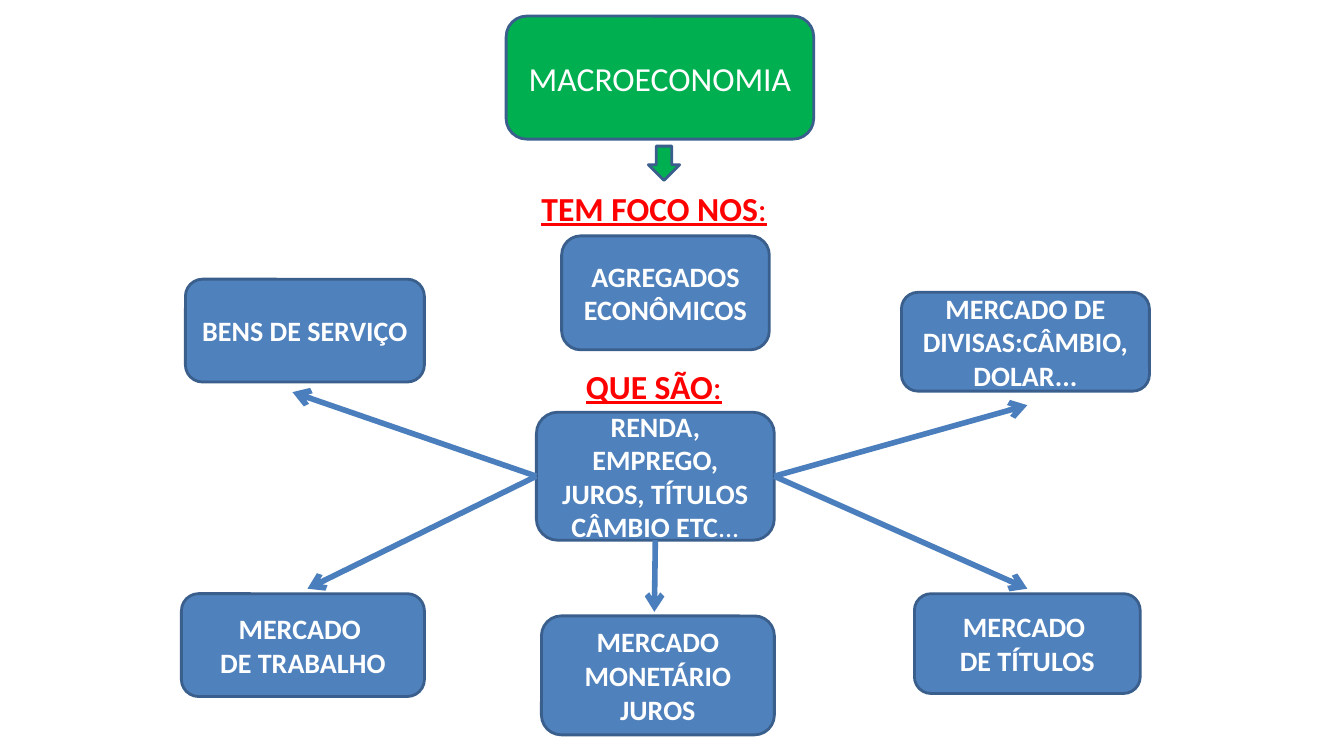
from dataclasses import dataclass

from lxml.etree import SubElement
from pptx import Presentation
from pptx.dml.color import RGBColor
from pptx.enum.shapes import MSO_CONNECTOR as Connector, MSO_SHAPE as Shape
from pptx.enum.text import MSO_ANCHOR as Anchor, MSO_AUTO_SIZE as AutoSize, PP_ALIGN as Align
from pptx.oxml.ns import qn
from pptx.util import Inches, Pt

WHITE = RGBColor(0xFF, 0xFF, 0xFF)
GREEN = RGBColor(0x00, 0xB0, 0x50)
BLUE = RGBColor(0x4F, 0x81, 0xBD)
OUTLINE = RGBColor(0x3A, 0x5F, 0x8C)
ARROW = RGBColor(0x4B, 0x7E, 0xBC)
RED = RGBColor(0xFF, 0x00, 0x00)

WIDTH, HEIGHT = Inches(13.33), Inches(7.5)
COLUMN, ROW = WIDTH / 100, HEIGHT / 100
LEFT, BOTTOM, RIGHT = 1, 2, 3


@dataclass
class Box:
    left: float
    top: float
    width: float
    height: float

    def area(self, left, top, width=0, height=0):
        return Box(self.left + left, self.top + top, width, height)

    def emu(self):
        return (round(self.left * COLUMN), round(self.top * ROW),
                round(self.width * COLUMN), round(self.height * ROW))


def write(shape, lines, size=20, color=WHITE, bold=True, underline=None,
          align=Align.CENTER, anchor=Anchor.MIDDLE, light_ending=""):
    frame = shape.text_frame
    frame.word_wrap = True
    frame.auto_size = AutoSize.NONE
    frame.vertical_anchor = anchor
    for index, line in enumerate(lines):
        paragraph = frame.add_paragraph() if index else frame.paragraphs[0]
        paragraph.alignment = align
        pieces = [(line, bold)]
        if light_ending and index == len(lines) - 1:
            pieces.append((light_ending, False))
        for text, weight in pieces:
            run = paragraph.add_run()
            run.text = text
            font = run.font
            font.name, font.size = "Calibri", Pt(size)
            font.bold, font.underline = weight, underline
            font.color.rgb = color


def add_block(slide, box, lines=(), kind=Shape.ROUNDED_RECTANGLE, fill=BLUE, light_ending=""):
    shape = slide.shapes.add_shape(kind, *box.emu())
    shape.shadow.inherit = False
    shape.fill.solid()
    shape.fill.fore_color.rgb = fill
    shape.line.color.rgb = OUTLINE
    shape.line.width = Pt(2)
    write(shape, lines, light_ending=light_ending)
    return shape


def add_label(slide, box, text, indent):
    label = slide.shapes.add_textbox(*box.emu())
    write(label, [text], size=24, color=RED, underline=True,
          align=Align.LEFT, anchor=Anchor.TOP, light_ending=":")
    label.text_frame.margin_left = Inches(indent)


def add_arrow(slide, source, side, tip):
    left, top, _, _ = tip.emu()
    arrow = slide.shapes.add_connector(Connector.STRAIGHT, left, top, left, top)
    arrow.begin_connect(source, side)
    arrow.line.color.rgb = ARROW
    arrow.line.width = Pt(4)
    properties = arrow._element.spPr
    SubElement(properties.find(qn("a:ln")), qn("a:tailEnd"), type="arrow")
    SubElement(properties, qn("a:effectLst"))


def add_header(slide, box):
    block = box.area(0, 0, box.width, 16.27)
    add_block(slide, block, fill=GREEN)
    title = slide.shapes.title
    title.left, title.top, title.width, title.height = block.emu()
    write(title, ["MACROECONOMIA"], size=24, bold=False)
    slide.shapes._spTree.append(title._element)
    add_block(slide, box.area(10.58, 17.2, 2.33, 4.53), kind=Shape.DOWN_ARROW, fill=GREEN)


def add_focus(slide, box):
    add_label(slide, box.area(0, 0, box.width, 6.67), "TEM FOCO NOS", 0.28)
    add_block(slide, box.area(3.61, 7.07, 15.45, 15.07), ["AGREGADOS ECONÔMICOS"])
    add_label(slide, box.area(3.61, 23.6, 13.35, 6.67), "QUE SÃO", 0.24)


def add_markets(slide, box):
    aggregates = add_block(slide, box.area(26.41, 17.6, 17.7, 16.93),
                           ["RENDA, EMPREGO, JUROS, TÍTULOS", "CÂMBIO ETC"],
                           light_ending="...")
    markets = [
        (["BENS DE SERVIÇO"], (0.3, 0, 17.78, 13.6), LEFT, (8.26, 14.94)),
        (["MERCADO ", "DE TRABALHO"], (0, 41.6, 18.08, 13.6), LEFT, (9.38, 40.94)),
        (["MERCADO DE DIVISAS:CÂMBIO, DOLAR..."], (53.57, 1.74, 18.45, 13.07), RIGHT, (62.94, 16.67)),
        (["MERCADO ", "DE TÍTULOS"], (54.54, 41.6, 16.8, 13.2), RIGHT, (62.94, 40.94)),
        (["MERCADO MONETÁRIO", "JUROS"], (26.79, 44.54, 17.33, 15.73), BOTTOM, (35.19, 44)),
    ]
    for lines, place, side, tip in markets:
        add_block(slide, box.area(*place), lines)
        add_arrow(slide, aggregates, side, box.area(*tip))


def main():
    presentation = Presentation()
    presentation.slide_width, presentation.slide_height = WIDTH, HEIGHT
    slide = presentation.slides.add_slide(presentation.slide_layouts.get_by_name("Title Only"))
    add_header(slide, Box(37.66, 2.13, 22.88, 21.73))
    add_focus(slide, Box(38.18, 24.13, 20.11, 30.27))
    add_markets(slide, Box(13.5, 36.93, 72.02, 60.27))
    presentation.save("out.pptx")


if __name__ == "__main__":
    main()
